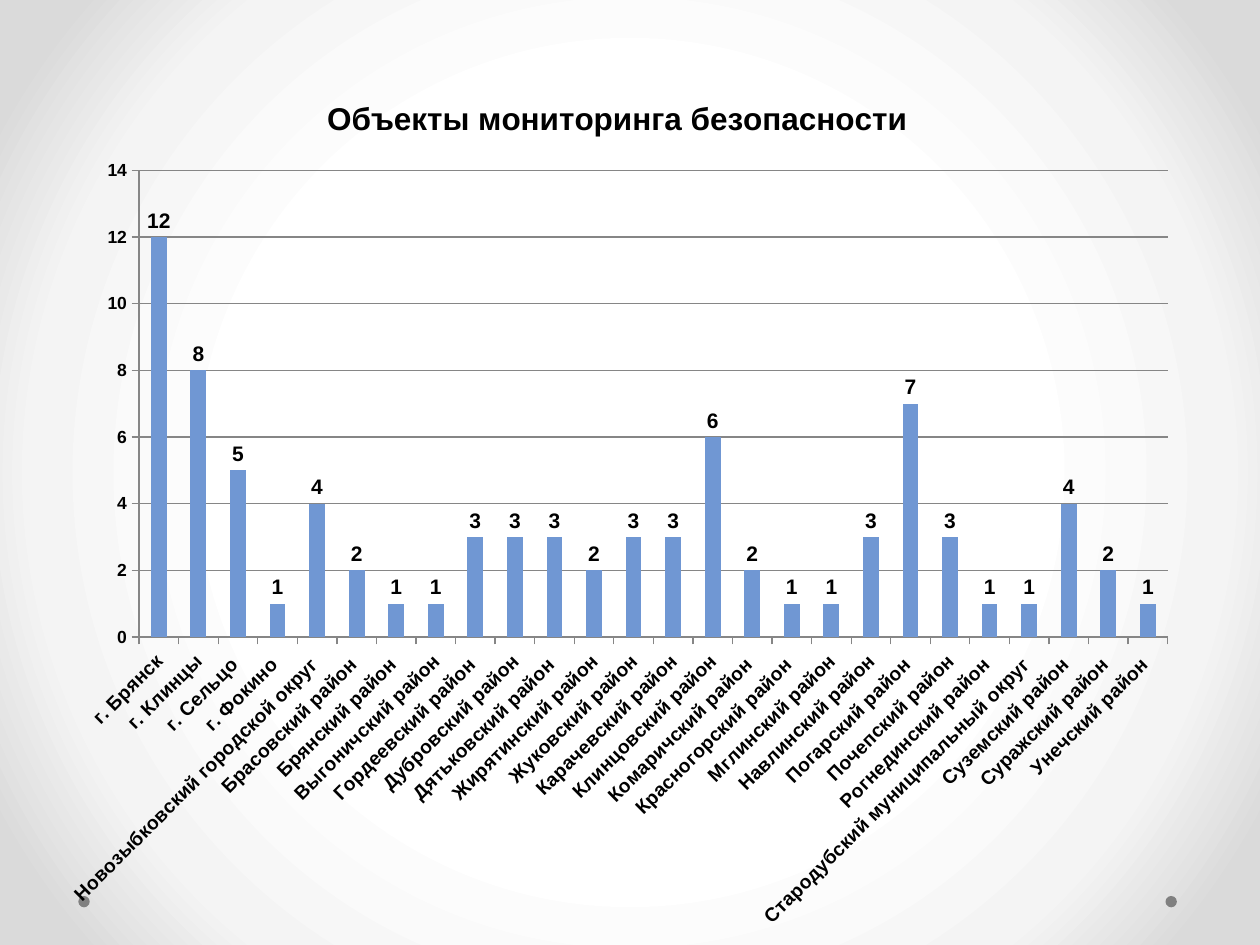
"""Build a slide with a column chart of safety monitoring objects by district."""
from dataclasses import dataclass

from pptx import Presentation
from pptx import oxml
from pptx.chart import data as chart_data
from pptx.dml import color
from pptx.enum import chart as kinds, shapes
from pptx.oxml import ns
from pptx.util import Pt


@dataclass(frozen=True)
class Theme:
    font: str = "Arial"
    base_font: str = "Vollkorn"
    ink: str = "000000"
    bar: str = "7097D3"
    line: str = "868686"
    dot: str = "808080"
    backdrop: tuple = ((50, "FFFFFF"), (76, "F4F4F4"), (92, "DADADA"))
    title: int = 18
    label: int = 12
    category: int = 11
    value: int = 10


theme = Theme()
counts = {
    "г. Брянск": 12,
    "г.\u00a0Клинцы": 8,
    "г. Сельцо ": 5,
    "г. Фокино ": 1,
    "Новозыбковский городской округ ": 4,
    "Брасовский район ": 2,
    "Брянский район ": 1,
    "Выгоничский район": 1,
    "Гордеевский район ": 3,
    "Дубровский район": 3,
    "Дятьковский район ": 3,
    "Жирятинский район": 2,
    "Жуковский район": 3,
    "Карачевский район": 3,
    "Клинцовский район": 6,
    "Комаричский район ": 2,
    "Красногорский район ": 1,
    "Мглинский район": 1,
    "Навлинский район": 3,
    "Погарский район ": 7,
    "Почепский район": 3,
    "Рогнединский район ": 1,
    "Стародубский муниципальный округ ": 1,
    "Суземский район ": 4,
    "Суражский район ": 2,
    "Унечский район ": 1,
}


def style(font, size, name=theme.font, bold=True):
    font.name, font.size, font.bold = name, Pt(size), bold
    font.color.rgb = color.RGBColor.from_string(theme.ink)


def write(frame, text, **format):
    span = frame.paragraphs[0].add_run()
    span.text = text
    style(span.font, **format)


deck = Presentation()
deck.slide_width, deck.slide_height = Pt(720), Pt(540)
page = deck.slides.add_slide(deck.slide_layouts[6])

page.background.fill.solid()
backdrop = page.background._cSld.bg.bgPr
stops = "".join(
    f'<a:gs pos="{place * 1000}"><a:srgbClr val="{tone}"/></a:gs>'
    for place, tone in theme.backdrop
)
backdrop.replace(backdrop[0], oxml.parse_xml(
    f'<a:gradFill {ns.nsdecls("a")} rotWithShape="1"><a:gsLst>{stops}</a:gsLst>'
    '<a:path path="circle"><a:fillToRect l="50000" t="50000" r="50000" b="50000"/>'
    '</a:path></a:gradFill>'
))

for left in (666, 44.75):
    dot = page.shapes.add_shape(
        shapes.MSO_SHAPE.OVAL, Pt(left), Pt(512), Pt(6.5), Pt(6.5))
    dot.shadow.inherit = False
    dot.fill.solid()
    dot.fill.fore_color.rgb = color.RGBColor.from_string(theme.dot)
    dot.line.fill.background()

table = chart_data.CategoryChartData()
table.categories = list(counts)
table.add_series("Series 1", list(counts.values()))
chart_left, chart_top, chart_width, chart_height = 25.2, 40.3, 654.5, 499.7
chart = page.shapes.add_chart(
    kinds.XL_CHART_TYPE.COLUMN_CLUSTERED,
    Pt(chart_left), Pt(chart_top), Pt(chart_width), Pt(chart_height), table).chart
style(chart.font, theme.value, name=theme.base_font, bold=False)
chart.has_legend = False
chart.has_title = True
write(chart.chart_title.text_frame, "Объекты мониторинга безопасности",
      size=theme.title)

plot = chart.plots[0]
plot.gap_width = 150
plot.vary_by_categories = False
bars = plot.series[0].format.fill
bars.solid()
bars.fore_color.rgb = color.RGBColor.from_string(theme.bar)
plot.has_data_labels = True
labels = plot.data_labels
labels.show_value = True
labels.position = kinds.XL_LABEL_POSITION.OUTSIDE_END
style(labels.font, theme.label)

across, up = chart.category_axis, chart.value_axis
up.minimum_scale, up.maximum_scale, up.major_unit = 0, 14, 2
up.has_major_gridlines = True
for axis, size in ((across, theme.category), (up, theme.value)):
    axis.major_tick_mark = kinds.XL_TICK_MARK.OUTSIDE
    style(axis.tick_labels.font, size)
for part in (across, up, up.major_gridlines):
    part.format.line.width = Pt(0.75)
    part.format.line.color.rgb = color.RGBColor.from_string(theme.line)
turned = across._element.find(ns.qn("c:txPr")).find(ns.qn("a:bodyPr"))
turned.set("rot", "-2700000")
turned.set("vert", "horz")

area = chart._chartSpace.chart
area.addnext(oxml.parse_xml(
    f'<c:spPr {ns.nsdecls("c", "a")}><a:noFill/><a:ln><a:noFill/></a:ln></c:spPr>'))
placements = (
    (area.plotArea, 0, '<c:layoutTarget val="inner"/>',
     {"x": 79.5, "y": 97.4, "w": 587.8, "h": 266.7}),
    (chart.chart_title._element, 1, "", {"x": 183.7, "y": 52.9}),
)
scales = {"x": (chart_left, chart_width), "y": (chart_top, chart_height),
          "w": (0, chart_width), "h": (0, chart_height)}
for owner, index, target, places in placements:
    for old in owner.findall(ns.qn("c:layout")):
        owner.remove(old)
    modes = "".join(f'<c:{key}Mode val="edge"/>' for key in "xy")
    values = "".join(
        f'<c:{key} val="{(value - scales[key][0]) / scales[key][1]:.5f}"/>'
        for key, value in places.items())
    owner.insert(index, oxml.parse_xml(
        f'<c:layout {ns.nsdecls("c")}><c:manualLayout>{target}{modes}{values}'
        '</c:manualLayout></c:layout>'))

deck.save("out.pptx")
